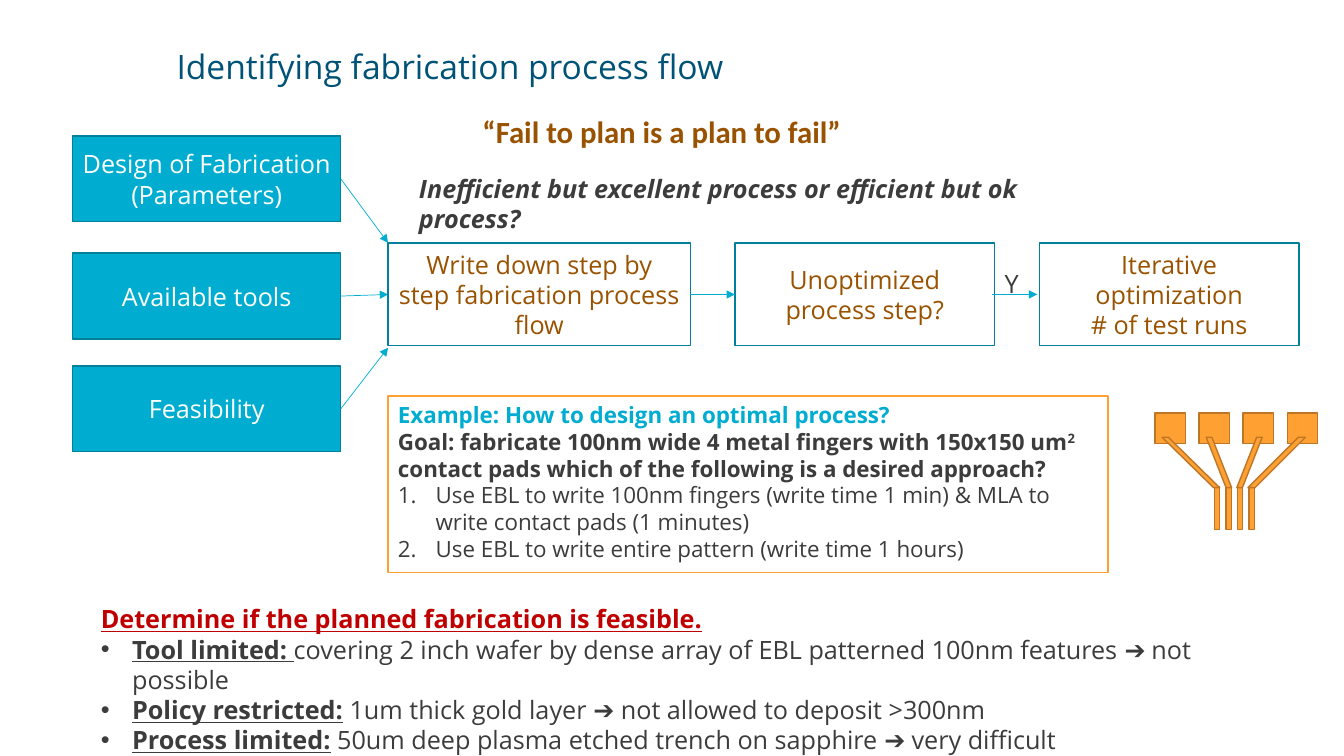
from lxml import etree
from pptx import Presentation
from pptx.dml.color import RGBColor
from pptx.enum.shapes import MSO_CONNECTOR, MSO_SHAPE
from pptx.enum.text import MSO_ANCHOR, PP_ALIGN
from pptx.oxml.ns import qn
from pptx.util import Cm, Pt

RECT, SLANTED = MSO_SHAPE.RECTANGLE, MSO_SHAPE.PARALLELOGRAM
STRAIGHT = MSO_CONNECTOR.STRAIGHT
TOP, MIDDLE = MSO_ANCHOR.TOP, MSO_ANCHOR.MIDDLE
LEFT, CENTER = PP_ALIGN.LEFT, PP_ALIGN.CENTER

CYAN, TEAL, BROWN, GREY, WHITE = "00ADD0", "00809A", "995200", "3C3C3C", "FFFFFF"
ORANGE, DARK_ORANGE, RED, NAVY = "FFA033", "BD7626", "C00000", "005376"


def rgb(value):
    return RGBColor.from_string(value)


def add_run(p, text, size=18, color=GREY, font="Open Sans", bold=False,
            italic=False, underline=False, raised=False):
    r = p.add_run()
    r.text = text
    f = r.font
    f.name, f.size, f.color.rgb = font, Pt(size), rgb(color)
    f.bold, f.italic, f.underline = bold, italic, underline
    if raised:
        r._r.get_or_add_rPr().set("baseline", "30000")


def set_list(p, indent, bullet=None):
    """Hanging indent with a bullet sign, or with numbers if none is given."""
    pPr = p._p.get_or_add_pPr()
    pPr.set("marL", str(Cm(indent)))
    pPr.set("indent", str(-Cm(indent)))
    if bullet:
        etree.SubElement(pPr, qn("a:buFont")).set("typeface", "Arial")
        etree.SubElement(pPr, qn("a:buChar")).set("char", bullet)
    else:
        etree.SubElement(pPr, qn("a:buAutoNum")).set("type", "arabicPeriod")


def write(s, paragraphs, align=LEFT, anchor=TOP, **style):
    """Each paragraph is a list of (text, style) runs; return the paragraphs."""
    tf = s.text_frame
    tf.word_wrap = True
    tf.vertical_anchor = anchor
    for i, runs in enumerate(paragraphs):
        p = tf.paragraphs[0] if i == 0 else tf.add_paragraph()
        p.alignment = align
        for text, own in runs:
            add_run(p, text, **{**style, **own})
    return tf.paragraphs


def add_label(slide, box, text, inset=True, anchor=TOP, **style):
    s = slide.shapes.add_textbox(*map(Cm, box))
    p = write(s, [[(text, style)]], anchor=anchor)[0]
    if not inset:
        tf = s.text_frame
        tf.margin_left = tf.margin_right = tf.margin_top = tf.margin_bottom = 0
    return p


def add_block(slide, box, fill=None, line=None, kind=RECT):
    s = slide.shapes.add_shape(kind, *map(Cm, box))
    s.shadow.inherit = False
    if fill:
        s.fill.solid()
        s.fill.fore_color.rgb = rgb(fill)
    else:
        s.fill.background()
    if line:
        s.line.color.rgb = rgb(line)
        s.line.width = Pt(1)
    else:
        s.line.fill.background()
    return s


def add_step(slide, box, lines, color, fill=None):
    s = add_block(slide, box, fill, TEAL)
    write(s, [[(line, {})] for line in lines], CENTER, MIDDLE, color=color)


def add_arrow(slide, x1, y1, x2, y2):
    s = slide.shapes.add_connector(STRAIGHT, Cm(x1), Cm(y1), Cm(x2), Cm(y2))
    s.line.color.rgb = rgb(CYAN)
    s.line.width = Pt(0.5)
    etree.SubElement(s.line._get_or_add_ln(), qn("a:tailEnd")).set("type", "triangle")
    etree.SubElement(s._element.spPr, qn("a:effectLst"))


def add_flow(slide):
    # Inputs, each with an arrow to the first step
    inputs = [(3.43, ["Design of Fabrication", "(Parameters)"], 6.12),
              (6.38, ["Available tools"], 7.42),
              (9.22, ["Feasibility"], 8.76)]
    for y, lines, target in inputs:
        add_step(slide, (1.83, y, 6.76, 2.16), lines, WHITE, CYAN)
        add_arrow(slide, 8.59, y + 1.08, 9.78, target)

    # Process steps
    steps = [(9.78, 7.62, ["Write down step by step fabrication process flow"]),
             (18.52, 6.55, ["Unoptimized process step?"]),
             (26.19, 6.55, ["Iterative optimization", "# of test runs"])]
    for x, width, lines in steps:
        add_step(slide, (x, 6.12, width, 2.59), lines, BROWN)
    for start, end in [(17.4, 18.52), (24.99, 26.14)]:
        add_arrow(slide, start, 7.42, end, 7.42)
    add_label(slide, (25.32, 6.75, 0.6, 0.8), "Y", inset=False)


def add_example(slide):
    s = add_block(slide, (9.78, 9.98, 18.14, 4.45), WHITE, ORANGE)
    bold = {"bold": True}
    paragraphs = write(s, [
        [("Example: How to design an optimal process?", {"bold": True, "color": CYAN})],
        [("Goal: fabricate 100nm wide 4 metal fingers with 150x150 um", bold),
         ("2", {"bold": True, "raised": True}),
         (" contact pads which of the following is a desired approach?", bold)],
        [("Use EBL to write 100nm fingers (write time 1 min) & MLA to write "
          "contact pads (1 minutes)", {})],
        [("Use EBL to write entire pattern (write time 1 hours)", {})],
    ], size=16)
    for p in paragraphs[2:]:
        set_list(p, 0.95)


def add_limits(slide):
    s = slide.shapes.add_textbox(Cm(2.29), Cm(15.09), Cm(30.2), Cm(4.19))
    head = {"bold": True, "underline": True}
    limits = [
        ("Tool limited: ", "covering 2 inch wafer by dense array of EBL patterned "
                           "100nm features ➔ not possible"),
        ("Policy restricted:", " 1um thick gold layer ➔ not allowed to deposit >300nm"),
        ("Process limited:", " 50um deep plasma etched trench on sapphire ➔ very difficult"),
    ]
    title = [("Determine if the planned fabrication is feasible.", {**head, "color": RED})]
    paragraphs = write(s, [title] + [[(name, head), (text, {})] for name, text in limits])
    for p in paragraphs[1:]:
        set_list(p, 0.79, "•")


def add_finger_pattern(slide):
    # Contact pads and fingers
    for i in range(4):
        add_block(slide, (29.11 + 1.11 * i, 10.41, 0.76, 0.76), ORANGE, DARK_ORANGE)
        add_block(slide, (30.61 + 0.29 * i, 12.27, 0.13, 1.07), ORANGE, DARK_ORANGE)
    # Slanted leads between them; the left pair is mirrored
    leads = [(31.45, 1.45, 1.0, False), (31.17, 0.64, 0.78, False),
             (30.4, 0.64, 0.78, True), (29.29, 1.45, 1.02, True)]
    for x, width, slant, mirrored in leads:
        s = add_block(slide, (x, 11.02, width, 1.27), ORANGE, DARK_ORANGE, SLANTED)
        s.adjustments[0] = slant
        if mirrored:
            s._element.spPr.find(qn("a:xfrm")).set("flipH", "1")


def main():
    prs = Presentation()
    prs.slide_width, prs.slide_height = Cm(33.87), Cm(19.05)
    slide = prs.slides.add_slide(prs.slide_layouts[6])

    # Title and motto
    p = add_label(slide, (4.45, 0.66, 28.04, 2.16), "Identifying fabrication process flow",
                  inset=False, anchor=MIDDLE, size=24, color=NAVY)
    p.line_spacing = 0.9
    add_label(slide, (11.91, 2.72, 10.72, 1.19), "“Fail to plan is a plan to fail”",
              size=22, color=BROWN, font="Calibri", bold=True)

    add_limits(slide)
    add_flow(slide)

    # Question above the flow
    s = add_block(slide, (10.31, 4.24, 17.68, 0.99), WHITE)
    write(s, [[("Inefficient but excellent process or efficient but ok process?", {})]],
          bold=True, italic=True)

    add_example(slide)
    add_finger_pattern(slide)
    prs.save("out.pptx")


if __name__ == "__main__":
    main()
